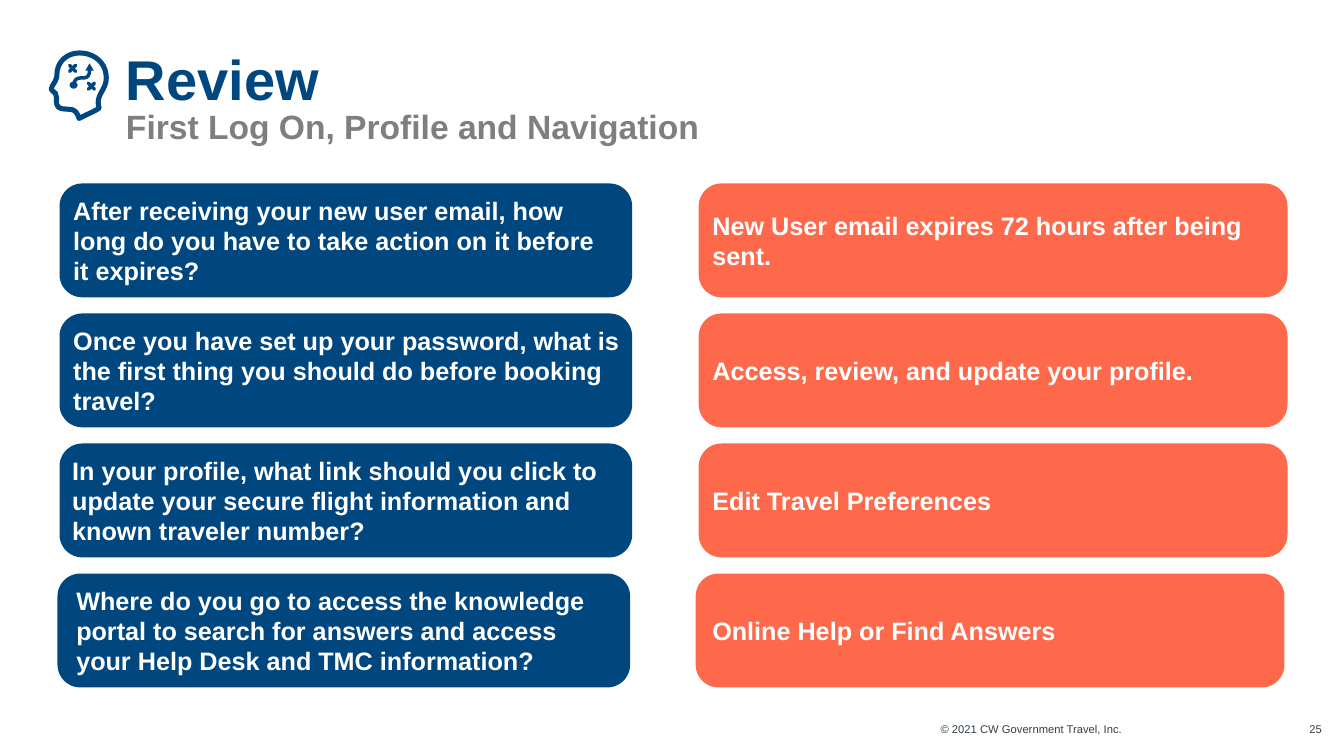
from dataclasses import dataclass

from pptx import Presentation
from pptx.dml.color import RGBColor
from pptx.enum.shapes import MSO_SHAPE
from pptx.enum.text import MSO_ANCHOR, PP_ALIGN
from pptx.oxml.ns import qn
from pptx.util import Emu, Pt

ROUNDED = MSO_SHAPE.ROUNDED_RECTANGLE
OVAL = MSO_SHAPE.OVAL
MIDDLE, BOTTOM, TOP = MSO_ANCHOR.MIDDLE, MSO_ANCHOR.BOTTOM, MSO_ANCHOR.TOP
LEFT, RIGHT = PP_ALIGN.LEFT, PP_ALIGN.RIGHT

EMU_PER_PX = 9144
ICON_UNITS_PER_PX = 10


@dataclass(frozen=True)
class Theme:
    font: str = "Arial"
    navy: RGBColor = RGBColor(0x00, 0x46, 0x7F)
    coral: RGBColor = RGBColor(0xFF, 0x69, 0x4B)
    grey: RGBColor = RGBColor(0x7F, 0x7F, 0x7F)
    slate: RGBColor = RGBColor(0x33, 0x3F, 0x48)
    white: RGBColor = RGBColor(0xFF, 0xFF, 0xFF)
    title: int = 40
    subtitle: int = 24
    body: int = 18
    footer: int = 8


THEME = Theme()

CARD_TOP, CARD_PITCH, CARD_HEIGHT = 182, 129, 113
QUESTION_WIDTH, ANSWER_WIDTH = 568, 584

# Question, its left edge and left and right insets; answer, its left edge and left inset
REVIEW_ROWS = [
    ("After receiving your new user email, how long do you have to take action on it before it expires?",
     59, 7, 11, "New User email expires 72 hours after being sent.", 693, 7),
    ("Once you have set up your password, what is the first thing you should do before booking travel?",
     59, 7, 5, "Access, review, and update your profile.", 693, 7),
    ("In your profile, what link should you click to update your secure flight information and known traveler number?",
     59, 6, 20, "Edit Travel Preferences", 693, 7),
    ("Where do you go to access the knowledge portal to search for answers and access your Help Desk "
     "and TMC information?",
     57, 12, 8, "Online Help or Find Answers", 690, 10),
]

# Cubic curves in icon units: a start point, then two controls and an end for each curve
HEAD_START = (790, 525)
HEAD_CURVES = [
    ((930, 525), (1055, 620), (1055, 770)),
    ((1055, 880), (975, 925), (975, 1015)),
    ((975, 1040), (980, 1060), (985, 1072)),
    ((920, 1115), (840, 1145), (785, 1175)),
    ((765, 1110), (735, 1085), (690, 1085)),
    ((600, 1080), (560, 1075), (560, 1000)),
    ((565, 960), (555, 955), (552, 925)),
    ((520, 905), (510, 890), (510, 880)),
    ((525, 830), (565, 800), (565, 740)),
    ((565, 610), (670, 525), HEAD_START),
]
ROUTE_START = (730, 845)
ROUTE_CURVES = [((750, 700), (890, 850), (890, 690))]
ROUTE_TIP = [(847, 700), (888, 628), (930, 700)]
CROSS_CENTRES = [(720, 678), (907, 855)]
CROSS_REACH = 30


def px(length):
    return Emu(length * EMU_PER_PX)


def style_span(span, size, color, bold=False):
    span.font.name = THEME.font
    span.font.size = Pt(size)
    span.font.color.rgb = color
    span.font.bold = bold


def prepare_frame(frame, anchor, left_inset=0, right_inset=0):
    frame.word_wrap = True
    frame.vertical_anchor = anchor
    frame.margin_left, frame.margin_right = px(left_inset), px(right_inset)
    frame.margin_top = frame.margin_bottom = 0


def add_title(page, heading, subheading):
    box = page.shapes.add_textbox(px(125), px(53), px(1153), px(92))
    frame = box.text_frame
    prepare_frame(frame, BOTTOM)
    frame.text = f"{heading}\v{subheading}"
    para = frame.paragraphs[0]
    para.line_spacing = 0.85
    heading_span, subheading_span = para.runs
    style_span(heading_span, THEME.title, THEME.navy, bold=True)
    style_span(subheading_span, THEME.subtitle, THEME.grey, bold=True)


def add_footer(page, text, left, width):
    box = page.shapes.add_textbox(px(left), px(717), px(width), px(14))
    prepare_frame(box.text_frame, TOP)
    box.text_frame.text = text
    para = box.text_frame.paragraphs[0]
    para.alignment = RIGHT
    style_span(para.runs[0], THEME.footer, THEME.slate)


def add_card(page, text, left, top, width, color, left_inset, right_inset=0):
    card = page.shapes.add_shape(ROUNDED, px(left), px(top), px(width), px(CARD_HEIGHT))
    card.adjustments[0] = 0.2
    fill_plain(card, color)
    prepare_frame(card.text_frame, MIDDLE, left_inset, right_inset)
    card.text_frame.text = text
    para = card.text_frame.paragraphs[0]
    para.alignment = LEFT
    style_span(para.runs[0], THEME.body, THEME.white, bold=True)


def fill_plain(shape, color):
    shape.shadow.inherit = False
    shape.fill.solid()
    shape.fill.fore_color.rgb = color
    shape.line.fill.background()


def flatten(start, curves, steps=10):
    """Turn a chain of cubic curves into the points of a polyline."""
    points = [start]
    for first, second, end in curves:
        begin = points[-1]
        for step in range(1, steps + 1):
            t = step / steps
            u = 1 - t
            points.append(tuple(
                round(u**3 * a + 3 * u * u * t * b + 3 * u * t * t * c + t**3 * d)
                for a, b, c, d in zip(begin, first, second, end)))
    return points


def add_outline(page, points, closed=False):
    builder = page.shapes.build_freeform(*points[0], scale=EMU_PER_PX / ICON_UNITS_PER_PX)
    builder.add_line_segments(points[1:], close=closed)
    return builder.convert_to_shape()


def add_stroke(page, points, weight, closed=False):
    stroke = add_outline(page, points, closed)
    stroke.shadow.inherit = False
    stroke.fill.background()
    stroke.line.color.rgb = THEME.navy
    stroke.line.width = Pt(weight)
    stroke._element.spPr.find(qn("a:ln")).set("cap", "rnd")


def add_strategy_icon(page):
    add_stroke(page, flatten(HEAD_START, HEAD_CURVES), 3.6, closed=True)
    add_stroke(page, flatten(ROUTE_START, ROUTE_CURVES), 2.5)
    fill_plain(add_outline(page, ROUTE_TIP, closed=True), THEME.navy)
    fill_plain(page.shapes.add_shape(OVAL, px(69), px(81), px(8), px(7)), THEME.navy)
    for x, y in CROSS_CENTRES:
        for rise in (-CROSS_REACH, CROSS_REACH):
            add_stroke(page, [(x - CROSS_REACH, y - rise), (x + CROSS_REACH, y + rise)], 2.5)


def main():
    deck = Presentation()
    deck.slide_width, deck.slide_height = px(1333), px(750)
    page = deck.slides.add_slide(deck.slide_layouts[6])

    add_strategy_icon(page)
    add_title(page, "Review", "First Log On, Profile and Navigation")
    add_footer(page, "© 2021 CW Government Travel, Inc.", 838, 275)
    add_footer(page, "25", 1288, 23)

    for index, row in enumerate(REVIEW_ROWS):
        question, question_left, left_inset, right_inset, answer, answer_left, answer_inset = row
        top = CARD_TOP + index * CARD_PITCH
        add_card(page, question, question_left, top, QUESTION_WIDTH, THEME.navy, left_inset, right_inset)
        add_card(page, answer, answer_left, top, ANSWER_WIDTH, THEME.coral, answer_inset)

    deck.save("out.pptx")


if __name__ == "__main__":
    main()
